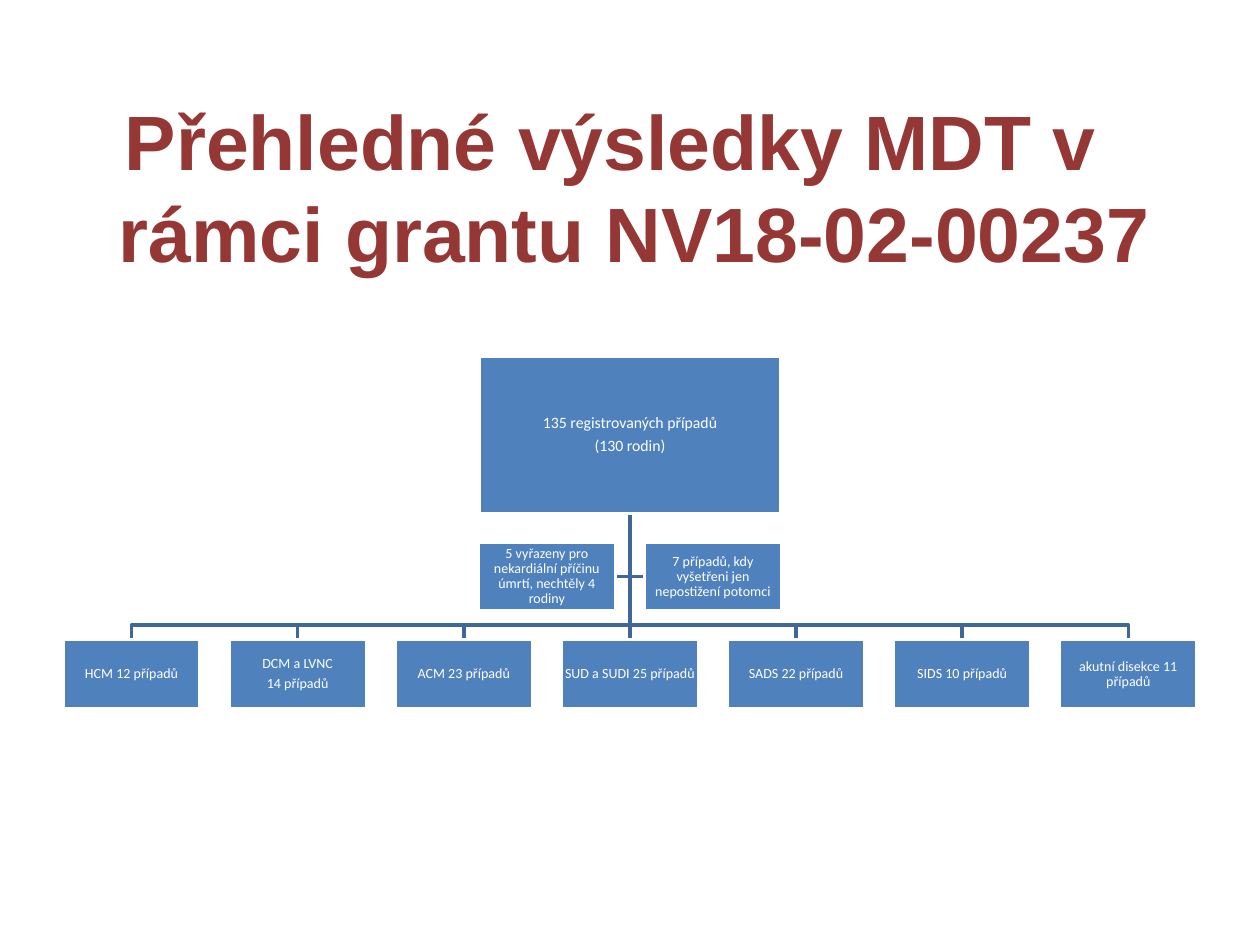
"""Build a slide with a case registry organisation chart."""
from lxml import etree
from pptx import Presentation
from pptx.dml.color import RGBColor
from pptx.enum.shapes import MSO_CONNECTOR, MSO_SHAPE
from pptx.enum.text import MSO_ANCHOR, PP_ALIGN
from pptx.oxml.ns import qn
from pptx.util import Pt

RECTANGLE = MSO_SHAPE.RECTANGLE
STRAIGHT = MSO_CONNECTOR.STRAIGHT
MIDDLE = MSO_ANCHOR.MIDDLE
CENTER = PP_ALIGN.CENTER
BOTTOM_SIDE, TOP_SIDE = 2, 0

COLORS = {"box": "4F81BD", "wire": "3F6797", "white": "FFFFFF", "title": "953735"}
LEAVES = [
    "HCM 12 případů",
    "DCM a LVNC\n14 případů",
    "ACM 23 případů",
    "SUD a SUDI 25 případů",
    "SADS 22 případů",
    "SIDS 10 případů",
    "akutní disekce 11 případů",
]
ASSISTANTS = [
    "5 vyřazeny pro nekardiální příčinu úmrtí, nechtěly 4 rodiny",
    "7 případů, kdy vyšetřeni jen nepostižení potomci",
]


def color(name):
    return RGBColor.from_string(COLORS[name])


def write(frame, text, *, size, font, ink, bold=False, inset=None, spacing=None, after=None, hanging=0):
    frame.word_wrap = True
    frame.vertical_anchor = MIDDLE
    if inset is not None:
        frame.margin_left = frame.margin_right = Pt(inset)
        frame.margin_top = frame.margin_bottom = Pt(inset)
    for index, line in enumerate(text.split("\n")):
        para = frame.add_paragraph() if index else frame.paragraphs[0]
        para.alignment = CENTER
        para.line_spacing = spacing
        if after is not None:
            para.space_after = Pt(after)
        if hanging:
            properties = para._p.get_or_add_pPr()
            properties.set("marL", str(Pt(hanging)))
            properties.set("indent", str(Pt(-hanging)))
        span = para.add_run()
        span.text = line
        span.font.size = Pt(size)
        span.font.name = font
        span.font.bold = bold
        span.font.color.rgb = color(ink)


class Chart:
    """Holds the chart style and the current slide."""

    def __init__(self, page, font="Calibri", line_width=2):
        self.page = page
        self.font = font
        self.line_width = line_width

    def stroke(self, shape, ink):
        shape.line.color.rgb = color(ink)
        shape.line.width = Pt(self.line_width)

    def title(self, text, left, top, width, height):
        box = self.page.shapes.add_textbox(Pt(left), Pt(top), Pt(width), Pt(height))
        write(box.text_frame, text, size=44, font="Arial", ink="title", bold=True, hanging=27)

    def box(self, text, left, top, width, height, size=8):
        box = self.page.shapes.add_shape(RECTANGLE, Pt(left), Pt(top), Pt(width), Pt(height))
        box.shadow.inherit = False
        box.fill.solid()
        box.fill.fore_color.rgb = color("box")
        self.stroke(box, "white")
        write(box.text_frame, text, size=size, font=self.font, ink="white",
              inset=0.4, spacing=0.9, after=round(size * 0.35, 2))
        return box

    def elbow(self, *points):
        start, *rest = [(Pt(x), Pt(y)) for x, y in points]
        builder = self.page.shapes.build_freeform(*start)
        builder.add_line_segments(rest, close=False)
        wire = builder.convert_to_shape()
        wire.shadow.inherit = False
        wire.fill.background()
        self.stroke(wire, "wire")

    def trunk(self, x, top, bottom):
        wire = self.page.shapes.add_connector(STRAIGHT, Pt(x), Pt(top), Pt(x), Pt(bottom))
        etree.SubElement(wire._element.spPr, qn("a:effectLst"))
        self.stroke(wire, "wire")
        return wire


def main():
    deck = Presentation()
    deck.slide_width, deck.slide_height = Pt(720), Pt(540)
    chart = Chart(deck.slides.add_slide(deck.slide_layouts[6]))

    center, left = 360, 36
    width, height, gap = 78.45, 39.2, 16.48
    pitch = width + gap
    root_width, root_top, root_height = 172.8, 203.6, 89.8
    root_bottom = root_top + root_height
    assistant_top = root_bottom + gap
    assistant_middle = assistant_top + height / 2
    leaf_top = assistant_top + height + gap
    bus = leaf_top - gap / 2
    middle = len(LEAVES) // 2

    for side in (1, -1):
        chart.elbow((center, root_bottom), (center, assistant_middle),
                    (center + side * gap / 2, assistant_middle))
    for index in range(len(LEAVES)):
        x = center + (index - middle) * pitch
        if index != middle:
            chart.elbow((center, root_bottom), (center, bus), (x, bus), (x, leaf_top))
    trunk = chart.trunk(center, root_bottom, leaf_top)

    root = chart.box("135 registrovaných případů\n(130 rodin)", center - root_width / 2,
                     root_top, root_width, root_height, size=9)
    leaves = [chart.box(text, left + index * pitch, leaf_top, width, height)
              for index, text in enumerate(LEAVES)]
    for index, text in enumerate(ASSISTANTS):
        chart.box(text, center + gap / 2 + (index - 1) * pitch, assistant_top, width, height)
    trunk.begin_connect(root, BOTTOM_SIDE)
    trunk.end_connect(leaves[middle], TOP_SIDE)

    chart.title("Přehledné výsledky MDT v rámci grantu NV18-02-00237", 25.2, 49, 648, 113.8)
    deck.save("out.pptx")


if __name__ == "__main__":
    main()
